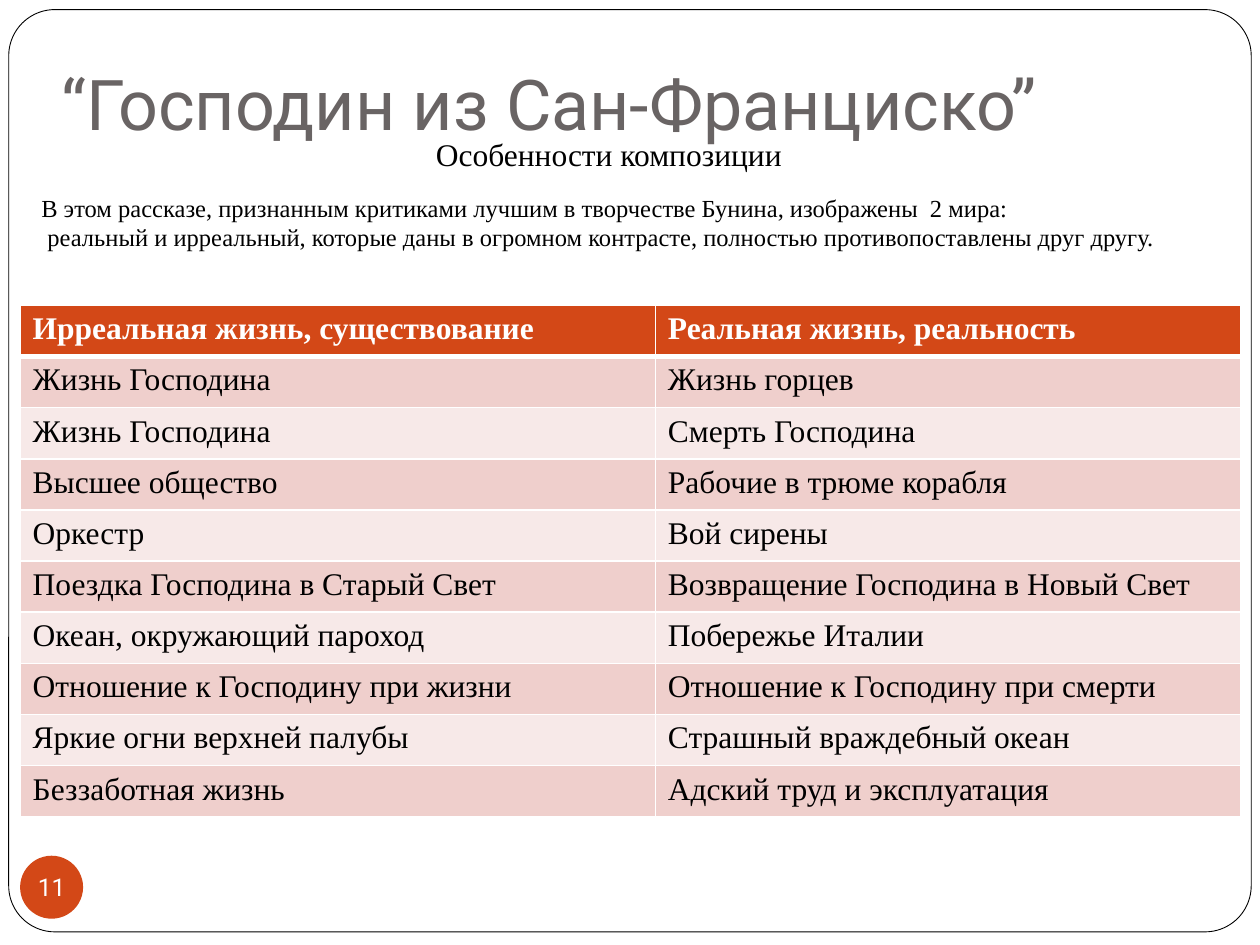
"""Build a slide contrasting the two worlds of a short story in a table."""
from lxml import etree
from pptx import Presentation
from pptx.dml.color import RGBColor
from pptx.enum import shapes, text
from pptx.oxml import ns
from pptx.util import Pt

SERIF = "Times New Roman"
SANS = "Roboto"
ACCENT = "D34817"
WHITE = "FFFFFF"
BLACK = "000000"
BANDS = ["F7E9E8", "EFCFCC"]


def color(value):
    return RGBColor.from_string(value)


def write(frame, content, font=SERIF, size=18, ink=BLACK, bold=False,
          align=text.PP_ALIGN.LEFT, anchor=text.MSO_ANCHOR.TOP,
          wrap=True, margins=(7.2, 3.6, 7.2, 3.6)):
    frame.word_wrap = wrap
    frame.vertical_anchor = anchor
    (frame.margin_left, frame.margin_top,
     frame.margin_right, frame.margin_bottom) = map(Pt, margins)
    for index, line in enumerate(content.split("\n")):
        paragraph = frame.add_paragraph() if index else frame.paragraphs[0]
        paragraph.alignment = align
        run = paragraph.add_run()
        run.text = line
        run.font.name = font
        run.font.size = Pt(size)
        run.font.bold = bold
        run.font.color.rgb = color(ink)


deck = Presentation()
deck.slide_width, deck.slide_height = Pt(720), Pt(540)
slide = deck.slides.add_slide(deck.slide_layouts[6])

border = slide.shapes.add_shape(shapes.MSO_SHAPE.ROUNDED_RECTANGLE,
                                Pt(5), Pt(5.5), Pt(710), Pt(527))
border.adjustments[0] = 0.05
border.shadow.inherit = False
border.fill.solid()
border.fill.fore_color.rgb = color(WHITE)
border.line.color.rgb = color(BLACK)
border.line.width = Pt(0.5)

title = slide.shapes.add_textbox(Pt(28), Pt(0), Pt(648), Pt(90))
write(title.text_frame, "“Господин из Сан-Франциско”", font=SANS, size=40,
      ink="696464", anchor=text.MSO_ANCHOR.BOTTOM, margins=(7.2, 3.6, 7.2, 7.2))

page_badge = slide.shapes.add_shape(shapes.MSO_SHAPE.OVAL,
                                    Pt(11.5), Pt(489), Pt(36), Pt(36))
page_badge.shadow.inherit = False
page_badge.fill.solid()
page_badge.fill.fore_color.rgb = color(ACCENT)
page_badge.line.fill.background()
write(page_badge.text_frame, "11", font=SANS, size=14, ink=WHITE, wrap=False,
      align=text.PP_ALIGN.CENTER, anchor=text.MSO_ANCHOR.MIDDLE,
      margins=(0, 0, 0, 0))

subtitle = slide.shapes.add_textbox(Pt(242), Pt(73.5), Pt(217), Pt(29))
write(subtitle.text_frame, "Особенности композиции", wrap=False)

intro = slide.shapes.add_textbox(Pt(16.5), Pt(106.5), Pt(658), Pt(41))
write(intro.text_frame,
      "В этом рассказе, признанным критиками лучшим в творчестве Бунина, "
      "изображены  2 мира:\n"
      " реальный и ирреальный, которые даны в огромном контрасте, "
      "полностью противопоставлены друг другу.", size=14)

contrasts = [
    ("Ирреальная жизнь, существование", "Реальная жизнь, реальность"),
    ("Жизнь Господина", "Жизнь горцев"),
    ("Жизнь Господина", "Смерть Господина"),
    ("Высшее общество", "Рабочие в трюме корабля"),
    ("Оркестр", "Вой сирены"),
    ("Поездка Господина в Старый Свет", "Возвращение Господина в Новый Свет"),
    ("Океан, окружающий пароход", "Побережье Италии"),
    ("Отношение к Господину при жизни", "Отношение к Господину при смерти"),
    ("Яркие огни верхней палубы", "Страшный враждебный океан"),
    ("Беззаботная жизнь", "Адский труд и эксплуатация"),
]
worlds = slide.shapes.add_table(len(contrasts), 2, Pt(11.5), Pt(174.5),
                                Pt(697.5), Pt(292.5)).table
for column, width in zip(worlds.columns, (363, 334.5)):
    column.width = Pt(width)

for r, pair in enumerate(contrasts):
    worlds.rows[r].height = Pt(29.25)
    header = r == 0
    edges = {"lnL": 1, "lnR": 1, "lnT": 3 if r == 1 else 1, "lnB": 3 if header else 1}
    for c, label in enumerate(pair):
        cell = worlds.cell(r, c)
        cell.fill.solid()
        cell.fill.fore_color.rgb = color(ACCENT if header else BANDS[r % 2])
        write(cell.text_frame, label, ink=WHITE if header else BLACK, bold=header)
        properties = cell._tc.get_or_add_tcPr()
        for position, (edge, weight) in enumerate(edges.items()):
            line = etree.Element(ns.qn(f"a:{edge}"), w=str(Pt(weight)))
            fill = etree.SubElement(line, ns.qn("a:solidFill"))
            etree.SubElement(fill, ns.qn("a:srgbClr"), val=WHITE)
            properties.insert(position, line)

deck.save("out.pptx")
